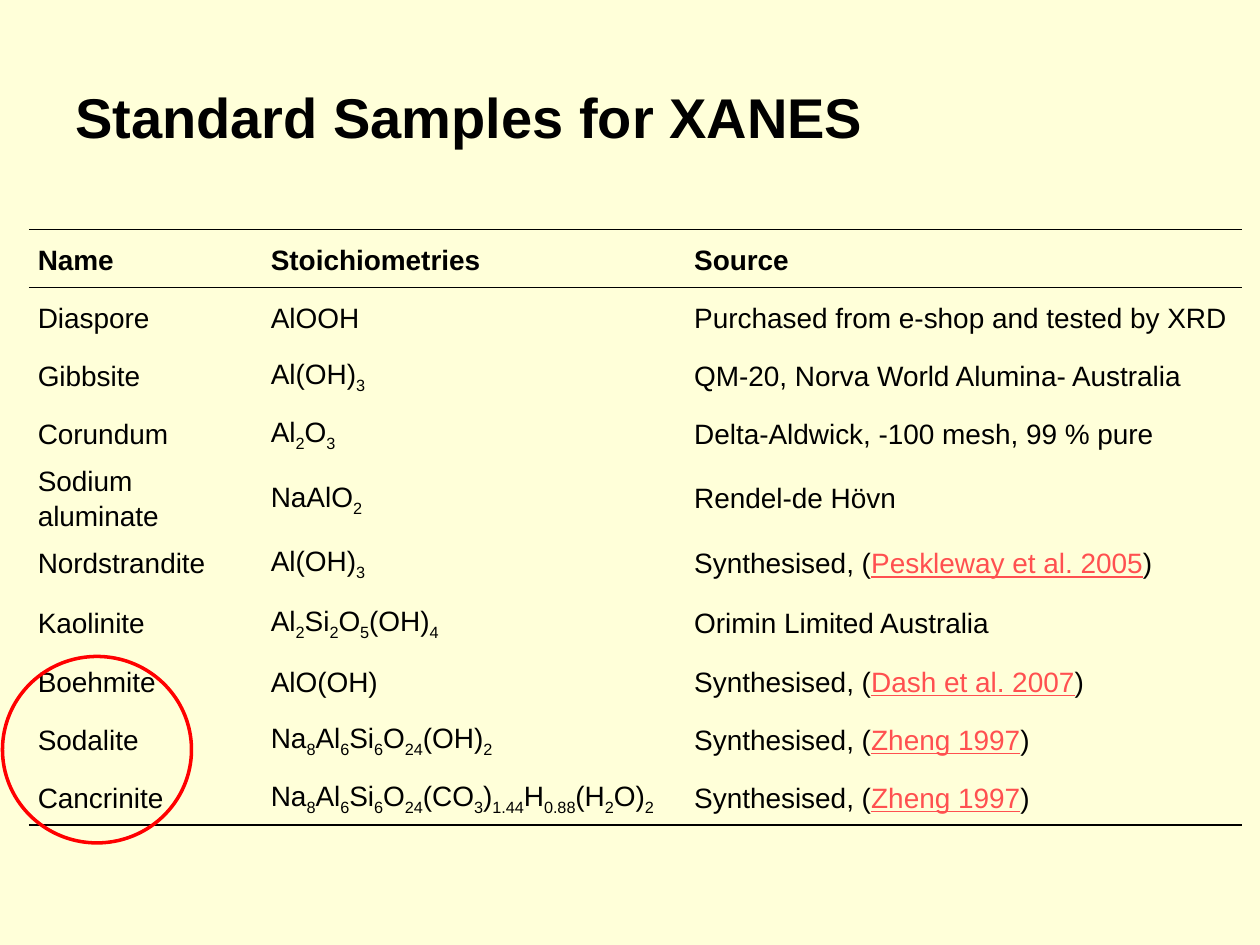
"""Build the slide listing the standard samples for XANES."""
from dataclasses import dataclass

import lxml.etree
import pptx
import pptx.dml.color
import pptx.enum.shapes
import pptx.enum.text
import pptx.oxml.ns
import pptx.util
from pptx.util import Inches


def rgb(code: str) -> pptx.dml.color.RGBColor:
    """Turn a hex code into a colour."""
    return pptx.dml.color.RGBColor.from_string(code)


@dataclass(frozen=True)
class Theme:
    """Colours, font and sizes of the slide."""
    page: str = "FFFFD9"
    ink: str = "000000"
    citation: str = "FF5050"
    ring: str = "FF0000"
    font: str = "Arial"
    title_size: int = 32
    cell_size: int = 16
    rule_width: int = 1
    ring_width: int = 2


@dataclass(frozen=True)
class Sample:
    """One table row; bars enclose subscripts in formulas and citations in sources."""
    name: str
    formula: str
    source: str
    height: float = 0.46


THEME = Theme()
PLAIN_TABLE_STYLE = "{2D5ABB26-0587-4C30-8999-92F81FD0307C}"
COLUMN_WIDTHS = (1.85, 3.36, 4.42)
SAMPLES = (
    Sample("Name", "Stoichiometries", "Source"),
    Sample("Diaspore", "AlOOH", "Purchased from e-shop and tested by XRD"),
    Sample("Gibbsite", "Al(OH)|3|", "QM-20, Norva World Alumina- Australia"),
    Sample("Corundum", "Al|2|O|3|", "Delta-Aldwick, -100 mesh, 99 % pure"),
    Sample("Sodium aluminate", "NaAlO|2|", "Rendel-de Hövn", 0.57),
    Sample("Nordstrandite", "Al(OH)|3|", "Synthesised, (|Peskleway et al. 2005|)"),
    Sample("Kaolinite", "Al|2|Si|2|O|5|(OH)|4|", "Orimin Limited Australia", 0.48),
    Sample("Boehmite", "AlO(OH)", "Synthesised, (|Dash et al. 2007|)"),
    Sample("Sodalite", "Na|8|Al|6|Si|6|O|24|(OH)|2|", "Synthesised, (|Zheng 1997|)"),
    Sample("Cancrinite", "Na|8|Al|6|Si|6|O|24|(CO|3|)|1.44|H|0.88|(H|2|O)|2|",
           "Synthesised, (|Zheng 1997|)"),
)


def style_paragraph(para, size: int, bold: bool) -> None:
    """Set the font of a whole paragraph."""
    para.font.name = THEME.font
    para.font.size = pptx.util.Pt(size)
    para.font.bold = bold
    para.font.color.rgb = rgb(THEME.ink)


def mark_subscript(span) -> None:
    """Lower a span below the baseline."""
    span._r.get_or_add_rPr().set("baseline", "-25000")


def mark_citation(span) -> None:
    """Underline and colour a span as a citation."""
    span.font.underline = True
    span.font.color.rgb = rgb(THEME.citation)


def add_rule(cell, side: str) -> None:
    """Draw a rule on one side of a cell: lnT for top, lnB for bottom."""
    properties = cell._tc.get_or_add_tcPr()
    qn = pptx.oxml.ns.qn
    line = lxml.etree.SubElement(properties, qn(f"a:{side}"),
                                 w=str(pptx.util.Pt(THEME.rule_width)))
    fill = lxml.etree.SubElement(line, qn("a:solidFill"))
    lxml.etree.SubElement(fill, qn("a:srgbClr"), val=THEME.ink)


def fill_cell(cell, text: str, bold: bool, mark, rules: tuple[str, ...]) -> None:
    """Write one cell, marking the parts between bars."""
    cell.vertical_anchor = pptx.enum.text.MSO_ANCHOR.MIDDLE
    cell.margin_left = cell.margin_right = Inches(0.07)
    cell.margin_top = cell.margin_bottom = 0
    for side in rules:
        add_rule(cell, side)
    cell.fill.background()
    para = cell.text_frame.paragraphs[0]
    para.line_spacing = 1.15
    para.space_after = pptx.util.Pt(2)
    style_paragraph(para, THEME.cell_size, bold)
    for index, part in enumerate(text.split("|")):
        if part:
            span = para.add_run()
            span.text = part
            if index % 2:
                mark(span)


def add_sample_table(page) -> None:
    """Add the table of samples with rules around its header and below it."""
    frame = page.shapes.add_table(len(SAMPLES), len(COLUMN_WIDTHS), Inches(0.23),
                                  Inches(1.82), Inches(sum(COLUMN_WIDTHS)),
                                  Inches(sum(sample.height for sample in SAMPLES)))
    table = frame.table
    table.horz_banding = False
    table.first_row = False
    style = table._tbl.tblPr.find(pptx.oxml.ns.qn("a:tableStyleId"))
    style.text = PLAIN_TABLE_STYLE
    for column, width in zip(table.columns, COLUMN_WIDTHS):
        column.width = Inches(width)
    rules = {0: ("lnT", "lnB"), len(SAMPLES) - 1: ("lnB",)}
    marks = (None, mark_subscript, mark_citation)
    for row, sample in enumerate(SAMPLES):
        table.rows[row].height = Inches(sample.height)
        texts = (sample.name, sample.formula, sample.source)
        for column, (text, mark) in enumerate(zip(texts, marks)):
            fill_cell(table.cell(row, column), text, row == 0, mark, rules.get(row, ()))


def add_title(page, text: str) -> None:
    """Add the slide title."""
    box = page.shapes.add_textbox(Inches(0.5), Inches(0.3), Inches(9), Inches(1.25))
    box.text_frame.word_wrap = True
    box.text_frame.vertical_anchor = pptx.enum.text.MSO_ANCHOR.MIDDLE
    para = box.text_frame.paragraphs[0]
    style_paragraph(para, THEME.title_size, True)
    para.add_run().text = text


def add_ring(page) -> None:
    """Circle the last three sample names."""
    ring = page.shapes.add_shape(pptx.enum.shapes.MSO_SHAPE.OVAL, Inches(0.02),
                                 Inches(5.21), Inches(1.5), Inches(1.48))
    ring.shadow.inherit = False
    ring.fill.background()
    ring.line.color.rgb = rgb(THEME.ring)
    ring.line.width = pptx.util.Pt(THEME.ring_width)


def main() -> None:
    """Build and save the deck."""
    deck = pptx.Presentation()
    deck.slide_width, deck.slide_height = Inches(10), Inches(7.5)
    page = deck.slides.add_slide(deck.slide_layouts[6])
    page.background.fill.solid()
    page.background.fill.fore_color.rgb = rgb(THEME.page)
    add_sample_table(page)
    add_title(page, "Standard Samples for XANES")
    add_ring(page)
    deck.save("out.pptx")


if __name__ == "__main__":
    main()
